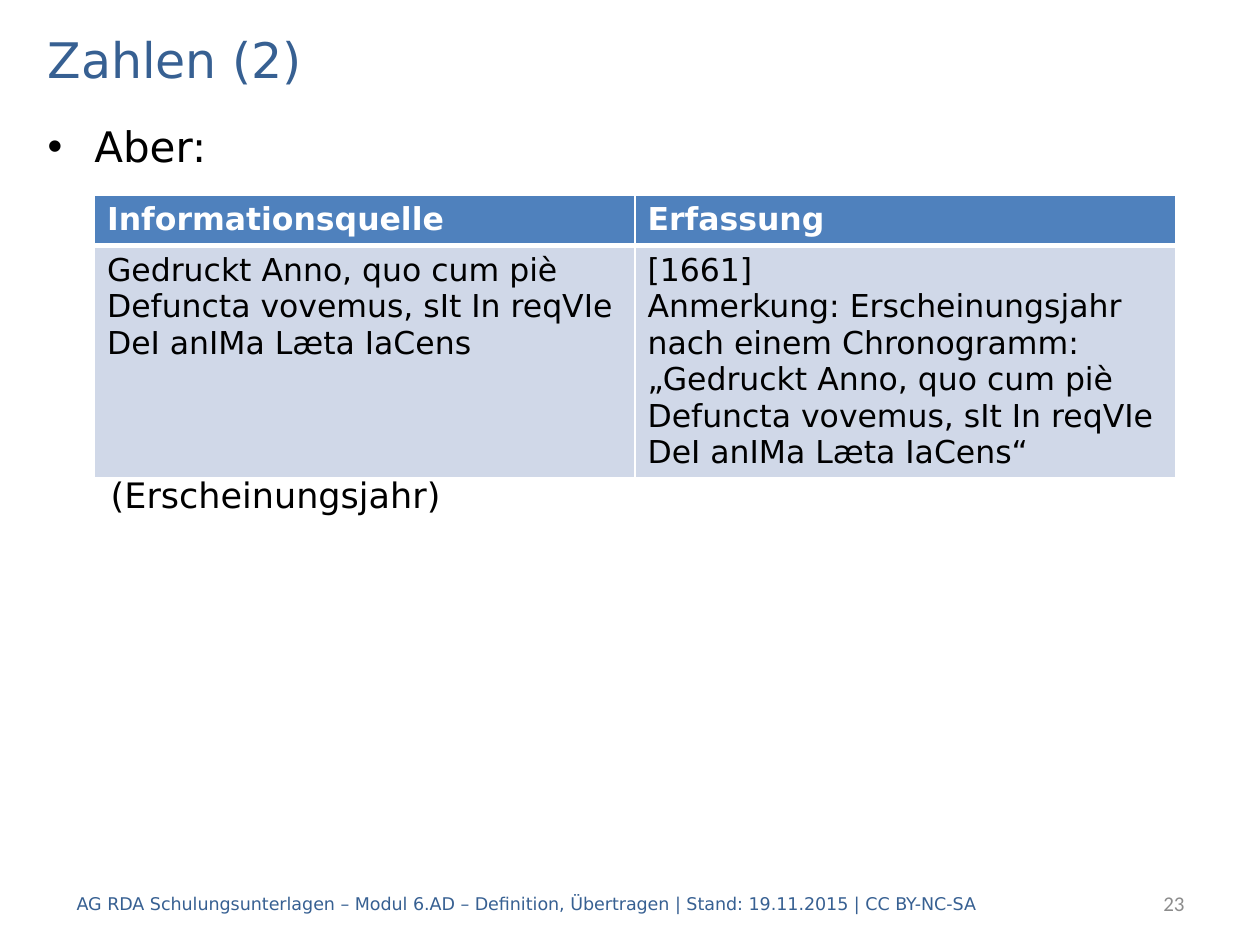
from lxml.etree import SubElement
from pptx import Presentation
from pptx.dml.color import RGBColor
from pptx.enum.text import MSO_ANCHOR, PP_ALIGN
from pptx.oxml.ns import qn
from pptx.util import Inches, Pt

COLORS = {"navy": "376092", "black": "000000", "white": "FFFFFF",
          "gray": "8C8C8C", "header": "4F81BD", "row": "D0D8E8"}
SANS = "DejaVu Sans"
WIDTH, HEIGHT = 10, 7.5
MARGIN, BODY_WIDTH = 0.28, 9.45
FOOTER_TOP, FOOTER_HEIGHT = 6.97, 0.4
BULLET_INDENT = 0.37

TEXTS = [
    {"text": "Zahlen (2)", "box": (MARGIN, 0.19, BODY_WIDTH, 0.56),
     "size": 28, "color": "navy", "anchor": MSO_ANCHOR.MIDDLE},
    {"text": "Aber:", "box": (MARGIN, 0.91, BODY_WIDTH, 0.5),
     "size": 24, "bullet": "•"},
    {"text": "(Erscheinungsjahr)", "box": (MARGIN + 0.5, 3.71, 8.95, 0.43),
     "size": 20},
    {"text": "AG RDA Schulungsunterlagen – Modul 6.AD – Definition, Übertragen"
             " | Stand: 19.11.2015 | CC BY-NC-SA",
     "box": (0.51, FOOTER_TOP, 8.27, FOOTER_HEIGHT),
     "size": 10, "color": "navy", "anchor": MSO_ANCHOR.MIDDLE},
    {"text": "23", "box": (7.91, FOOTER_TOP, 1.59, FOOTER_HEIGHT),
     "size": 12, "color": "gray", "font": "Calibri",
     "anchor": MSO_ANCHOR.MIDDLE, "align": PP_ALIGN.RIGHT},
]

CHRONOGRAM = "Gedruckt Anno, quo cum piè Defuncta vovemus, sIt In reqVIe DeI anIMa Læta IaCens"
EXAMPLES = [
    ("Informationsquelle", "Erfassung"),
    (CHRONOGRAM,
     "[1661]\nAnmerkung: Erscheinungsjahr nach einem Chronogramm: "
     f"„{CHRONOGRAM}“"),
]
EXAMPLES_LEFT, EXAMPLES_TOP = 0.75, 1.55
COLUMN_WIDTH, ROW_HEIGHT = 4.29, 0.4
ROW_STYLES = [
    {"fill": "header", "color": "white", "bold": True, "bottom": 3},
    {"fill": "row", "color": "black", "bold": False, "bottom": 1},
]


def rgb(name):
    return RGBColor.from_string(COLORS[name])


def write(frame, text, size, color="black", font=SANS, bold=False,
          align=PP_ALIGN.LEFT):
    frame.text = text
    frame.word_wrap = True
    for paragraph in frame.paragraphs:
        paragraph.alignment = align
        values = {"size": Pt(size), "name": font, "bold": bold}
        for run in paragraph.runs:
            for key, value in values.items():
                setattr(run.font, key, value)
            run.font.color.rgb = rgb(color)


def add_bullet(paragraph, symbol):
    properties = paragraph._p.get_or_add_pPr()
    indent = Inches(BULLET_INDENT)
    for key, value in {"marL": indent, "indent": -indent}.items():
        properties.set(key, str(value))
    SubElement(properties, qn("a:buFont"), typeface="Arial")
    SubElement(properties, qn("a:buChar"), char=symbol)


def add_text(slide, text, box, anchor=MSO_ANCHOR.TOP, bullet=None, **style):
    frame = slide.shapes.add_textbox(*map(Inches, box)).text_frame
    write(frame, text, **style)
    frame.vertical_anchor = anchor
    if bullet:
        add_bullet(frame.paragraphs[0], bullet)


def add_borders(cell, widths):
    properties = cell._tc.get_or_add_tcPr()
    for side, width in widths.items():
        line = SubElement(properties, qn(f"a:ln{side}"), w=str(Pt(width)))
        fill = SubElement(line, qn("a:solidFill"))
        SubElement(fill, qn("a:srgbClr"), val=COLORS["white"])


def add_examples(slide):
    rows, columns = len(EXAMPLES), len(EXAMPLES[0])
    table = slide.shapes.add_table(
        rows, columns, Inches(EXAMPLES_LEFT), Inches(EXAMPLES_TOP),
        Inches(COLUMN_WIDTH * columns), Inches(ROW_HEIGHT * rows)).table
    for row, texts, style in zip(table.rows, EXAMPLES, ROW_STYLES):
        for cell, text in zip(row.cells, texts):
            write(cell.text_frame, text, 18, style["color"], bold=style["bold"])
            add_borders(cell, {"L": 1, "R": 1, "T": 1, "B": style["bottom"]})
            cell.fill.solid()
            cell.fill.fore_color.rgb = rgb(style["fill"])


def main():
    presentation = Presentation()
    presentation.slide_width = Inches(WIDTH)
    presentation.slide_height = Inches(HEIGHT)
    slide = presentation.slides.add_slide(presentation.slide_layouts[6])
    add_examples(slide)
    for item in TEXTS:
        add_text(slide, **item)
    presentation.save("out.pptx")


if __name__ == "__main__":
    main()
